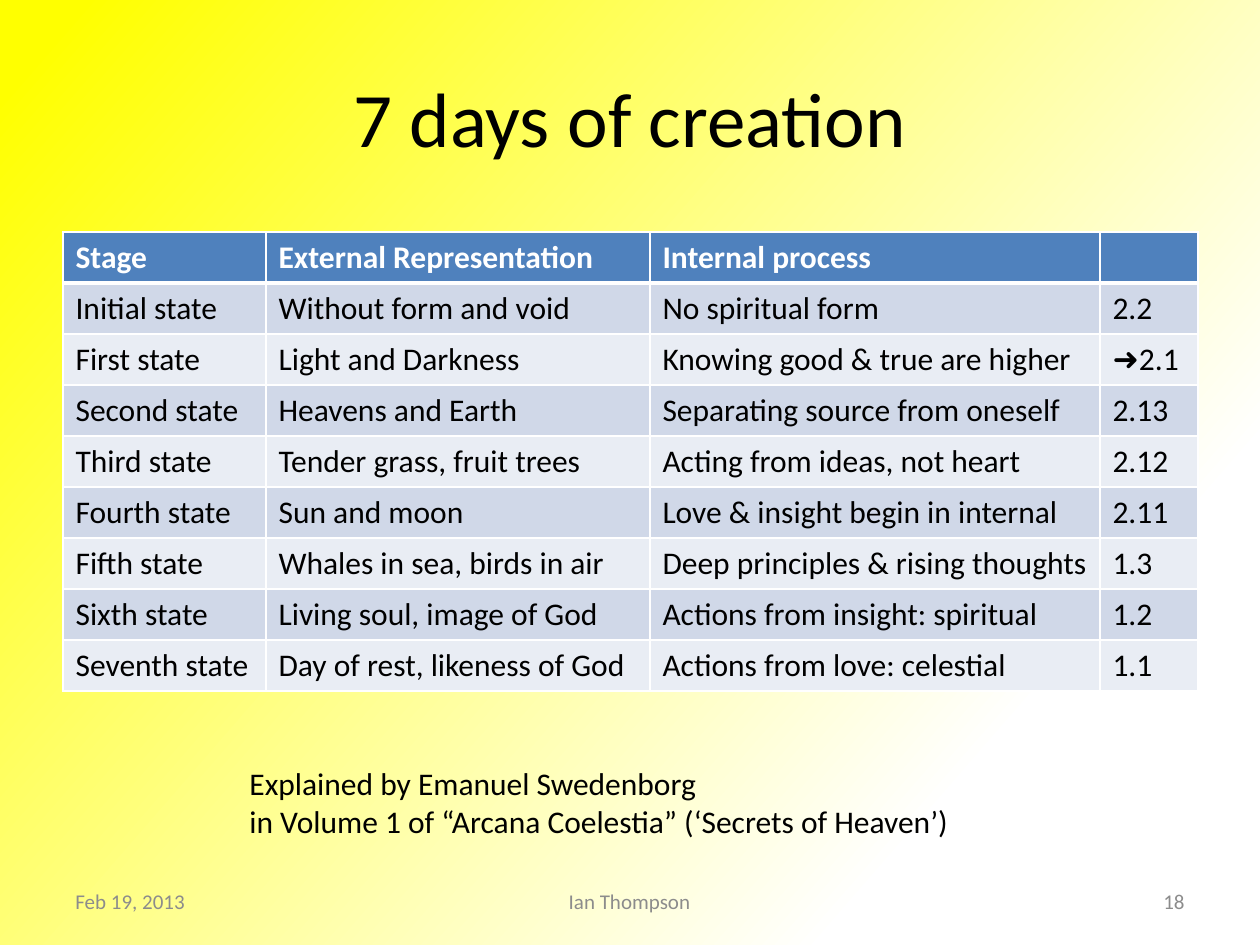
from lxml import etree
from pptx import Presentation, util as u
from pptx.dml.color import RGBColor
from pptx.enum import text as t
from pptx.oxml import ns

PX = 914400 // 126
BLACK = RGBColor(0, 0, 0)
WHITE = RGBColor(255, 255, 255)
YELLOW = RGBColor(255, 255, 0)
GREY = RGBColor(0x8C, 0x8C, 0x8C)
BLUE = RGBColor(0x4F, 0x81, 0xBD)
BANDS = RGBColor(0xE9, 0xED, 0xF4), RGBColor(0xD0, 0xD8, 0xE8)
LEFT, MID, RIGHT = t.PP_ALIGN.LEFT, t.PP_ALIGN.CENTER, t.PP_ALIGN.RIGHT

COLS = 203, 384, 450, 98
ROWS = [
    ("Stage", "External Representation", "Internal process", ""),
    ("Initial state", "Without form and void", "No spiritual form", "2.2"),
    ("First state", "Light and Darkness", "Knowing good & true are higher", "➜2.1"),
    ("Second state", "Heavens and Earth", "Separating source from oneself", "2.13"),
    ("Third state", "Tender grass, fruit trees", "Acting from ideas, not heart", "2.12"),
    ("Fourth state", "Sun and moon", "Love & insight begin in internal", "2.11"),
    ("Fifth state", "Whales in sea, birds in air", "Deep principles & rising thoughts", "1.3"),
    ("Sixth state", "Living soul, image of God", "Actions from insight: spiritual", "1.2"),
    ("Seventh state", "Day of rest, likeness of God", "Actions from love: celestial", "1.1"),
]


def style(frame, size, color, bold=False, align=LEFT):
    look = {"name": "Calibri", "size": u.Pt(size), "bold": bold}
    for par in frame.paragraphs:
        par.alignment = align
        for font in [par.font] + [run.font for run in par.runs]:
            for key, val in look.items():
                setattr(font, key, val)
            font.color.rgb = color


def label(slide, box, words, size, color, align=LEFT,
          anchor=t.MSO_ANCHOR.MIDDLE, wrap=True):
    shape = slide.shapes.add_textbox(*(n * PX for n in box))
    frame = shape.text_frame
    frame.text = words
    frame.word_wrap = wrap
    frame.vertical_anchor = anchor
    style(frame, size, color, align=align)
    return frame


def border(cell, widths):
    props = cell._tc.get_or_add_tcPr()
    for spot, (side, width) in enumerate(widths.items()):
        line = etree.Element(ns.qn("a:" + side), w=str(u.Pt(width)))
        fill = etree.SubElement(line, ns.qn("a:solidFill"))
        etree.SubElement(fill, ns.qn("a:srgbClr"), val=str(WHITE))
        props.insert(spot, line)


def backdrop(slide):
    fill = slide.background.fill
    fill.gradient()
    fill.gradient_angle = 319
    for stop, (place, color) in zip(fill.gradient_stops, [(0.04, YELLOW), (0.79, WHITE)]):
        stop.position = place
        stop.color.rgb = color


def stages(slide, x, y, high):
    box = x, y, sum(COLS), high * len(ROWS)
    table = slide.shapes.add_table(len(ROWS), len(COLS), *(n * PX for n in box)).table
    for col, wide in zip(table.columns, COLS):
        col.width = wide * PX
    for r, row in enumerate(ROWS):
        table.rows[r].height = high * PX
        head = r == 0
        for c, words in enumerate(row):
            cell = table.cell(r, c)
            cell.text = words
            cell.fill.solid()
            cell.fill.fore_color.rgb = BLUE if head else BANDS[r % 2]
            style(cell.text_frame, 18, WHITE if head else BLACK, head)
            border(cell, {"lnL": 1, "lnR": 1, "lnT": 3 if r == 1 else 1,
                          "lnB": 3 if head else 1})


def footer(slide, x, y, wide, high):
    side, mid = 294, 399
    parts = [
        (0, side, "Feb 19, 2013", LEFT),
        ((wide - mid) // 2, mid, "Ian Thompson", MID),
        (wide - side, side, "18", RIGHT),
    ]
    for left, span, words, align in parts:
        label(slide, (x + left, y, span, high), words, 12, GREY, align)


def main():
    deck = Presentation()
    deck.slide_width, deck.slide_height = 1260 * PX, 945 * PX
    slide = deck.slides.add_slide(deck.slide_layouts[6])
    backdrop(slide)
    label(slide, (63, 38, 1134, 157), "7 days of creation", 44, BLACK, MID)
    stages(slide, 63, 232, 51)
    footer(slide, 63, 876, 1134, 50)
    note = label(slide, (237, 758, 738, 89),
                 "Explained by Emanuel Swedenborg\v"
                 "in Volume 1 of “Arcana Coelestia” (‘Secrets of Heaven’)",
                 18, BLACK, anchor=t.MSO_ANCHOR.TOP, wrap=False)
    note.auto_size = t.MSO_AUTO_SIZE.SHAPE_TO_FIT_TEXT
    deck.save("out.pptx")


if __name__ == "__main__":
    main()
